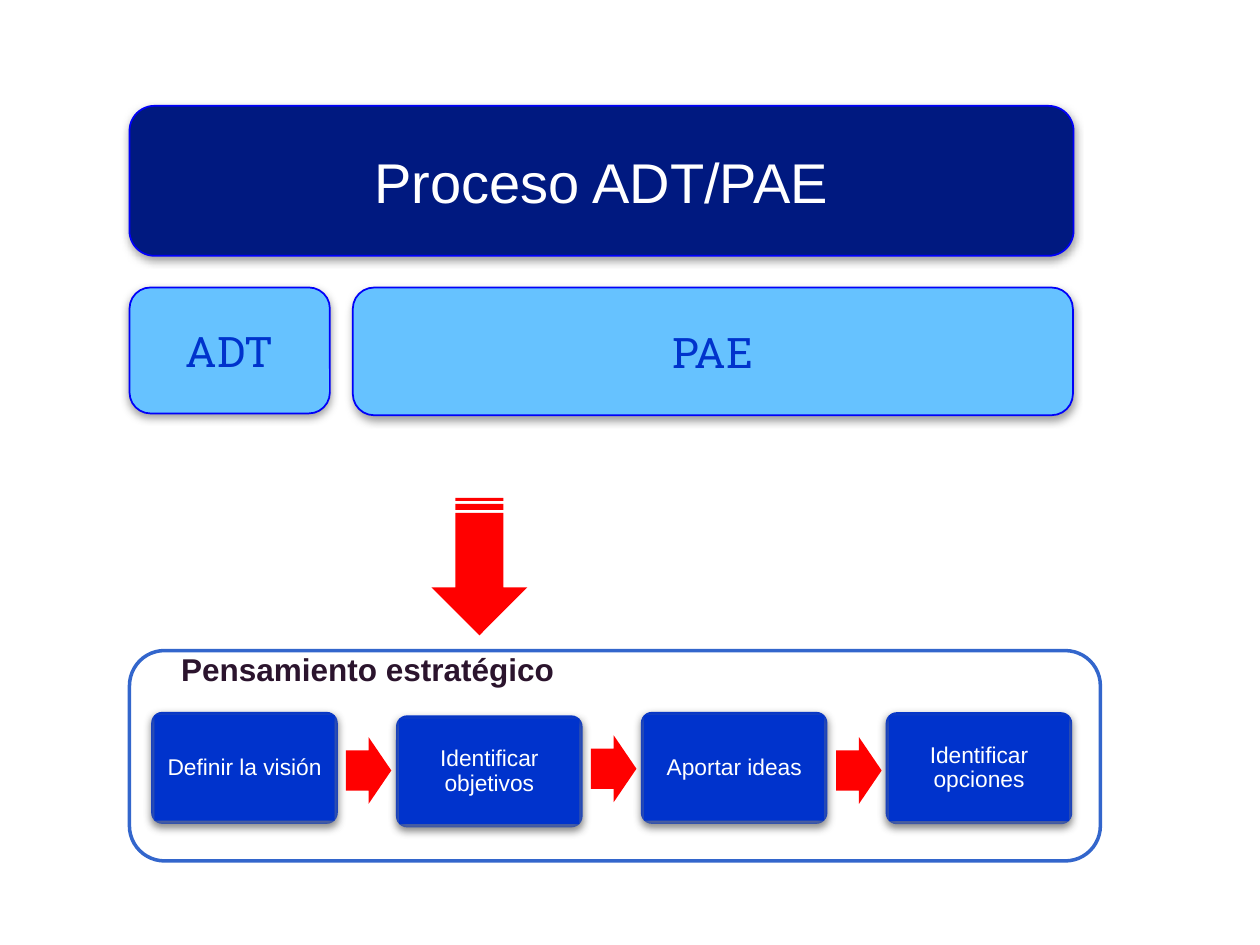
from typing import NamedTuple, Optional

from lxml import etree
from pptx import Presentation
from pptx.dml.color import RGBColor
from pptx.enum.shapes import MSO_SHAPE
from pptx.enum.text import MSO_ANCHOR, MSO_AUTO_SIZE, PP_ALIGN
from pptx.oxml.ns import qn
from pptx.util import Pt

ROUND, RECT = MSO_SHAPE.ROUNDED_RECTANGLE, MSO_SHAPE.RECTANGLE
ARROW, STRIPED = MSO_SHAPE.RIGHT_ARROW, MSO_SHAPE.STRIPED_RIGHT_ARROW
MIDDLE, CENTER = MSO_ANCHOR.MIDDLE, PP_ALIGN.CENTER
GROW = MSO_AUTO_SIZE.SHAPE_TO_FIT_TEXT

WHITE = RGBColor(0xFF, 0xFF, 0xFF)
NAVY = RGBColor(0x00, 0x19, 0x80)
SKY = RGBColor(0x66, 0xC2, 0xFF)
BLUE = RGBColor(0x00, 0x33, 0xCC)
BORDER = RGBColor(0x00, 0x00, 0xF9)
FRAME = RGBColor(0x33, 0x66, 0xCC)
RED = RGBColor(0xFF, 0x00, 0x00)
PLUM = RGBColor(0x2B, 0x14, 0x2D)
SHADOW = RGBColor(0x80, 0x80, 0x80)


class Box(NamedTuple):
    left: float
    top: float
    width: float
    height: float


class Banner(NamedTuple):
    text: str
    box: Box
    fill: RGBColor
    font: dict


class Step(NamedTuple):
    text: str
    top: float


STEP_LEFT, STEP_PITCH, STEP_W, STEP_H = 86.4, 139.9, 106.6, 64
LABEL_INSET = 1.8
ARROW_LEFT, ARROW_PITCH, ARROW_W, ARROW_H = 197.6, 140.1, 26, 38.2

LABEL_FONT = {"name": "Roboto Slab", "size": Pt(24)}
STEP_FONT = {"name": "Arial", "size": Pt(13)}
STEP_PARA = {"line_spacing": 0.9, "space_after": Pt(4.55)}
STEP_MARGINS = {f"margin_{side}": Pt(3.6)
                for side in ("left", "top", "right", "bottom")}

BANNERS = [
    Banner("Proceso ADT/PAE", Box(74, 60.5, 539.5, 85.7), NAVY,
           {"name": "Arial", "size": Pt(32)}),
    Banner("ADT", Box(74, 164.3, 114.5, 72), SKY, LABEL_FONT),
    Banner("PAE", Box(201.6, 164.3, 411.5, 73), SKY, LABEL_FONT),
]
STEPS = [
    Step("Definir la visión", 406.8),
    Step("Identificar objetivos", 408.8),
    Step("Aportar ideas", 406.8),
    Step("Identificar opciones", 407),
]
ARROW_TOPS = [421.2, 420.2, 421.2]


def apply(target, values: dict) -> None:
    for name, value in values.items():
        setattr(target, name, value)


def add_shadow(sp) -> None:
    effects = sp._element.spPr.find(qn("a:effectLst"))
    outer = etree.SubElement(effects, qn("a:outerShdw"), blurRad=str(Pt(5)),
                             dist=str(Pt(2)), dir="5400000", rotWithShape="0")
    color = etree.SubElement(outer, qn("a:srgbClr"), val=str(SHADOW))
    etree.SubElement(color, qn("a:alpha"), val="75000")


def add_shape(shapes, kind, box: Box, fill: Optional[RGBColor] = None,
              line: Optional[RGBColor] = None, weight: float = 1,
              shadow: bool = False, adj: tuple = ()):
    sp = shapes.add_shape(kind, *map(Pt, box))
    for i, value in enumerate(adj):
        sp.adjustments[i] = value
    if fill is None:
        sp.fill.background()
    else:
        sp.fill.solid()
        sp.fill.fore_color.rgb = fill
    if line is None:
        sp.line.fill.background()
    else:
        sp.line.color.rgb = line
        sp.line.width = Pt(weight)
    sp.shadow.inherit = False
    if shadow:
        add_shadow(sp)
    return sp


def write(sp, text: str, font: dict, color: RGBColor, para: dict, frame: dict) -> None:
    tf = sp.text_frame
    apply(tf, {"word_wrap": True, **frame})
    p = tf.paragraphs[0]
    apply(p, para)
    r = p.add_run()
    r.text = text
    apply(r.font, font)
    r.font.color.rgb = color


def add_banner(shapes, banner: Banner) -> None:
    sp = add_shape(shapes, ROUND, banner.box, banner.fill, BORDER, shadow=True)
    color = WHITE if banner.fill == NAVY else BLUE
    write(sp, banner.text, banner.font, color,
          {"alignment": CENTER}, {"vertical_anchor": MIDDLE})


def add_step(shapes, step: Step, left: float) -> None:
    group = shapes.add_group_shape().shapes
    add_shape(group, ROUND, Box(left, step.top, STEP_W, STEP_H), BLUE,
              shadow=True, adj=(0.1,))
    inner = Box(left + LABEL_INSET, step.top + LABEL_INSET,
                STEP_W - 2 * LABEL_INSET, STEP_H - 2 * LABEL_INSET)
    label = add_shape(group, RECT, inner, BLUE, shadow=True)
    write(label, step.text, STEP_FONT, WHITE, {"alignment": CENTER, **STEP_PARA},
          {"vertical_anchor": MIDDLE, **STEP_MARGINS})


def main() -> None:
    prs = Presentation()
    prs.slide_width, prs.slide_height = Pt(720), Pt(540)
    s = prs.slides.add_slide(prs.slide_layouts[6])

    # Strategic thinking steps and the arrows between them
    for i, step in enumerate(STEPS):
        add_step(s.shapes, step, STEP_LEFT + i * STEP_PITCH)
    for i, top in enumerate(ARROW_TOPS):
        box = Box(ARROW_LEFT + i * ARROW_PITCH, top, ARROW_W, ARROW_H)
        add_shape(s.shapes, ARROW, box, RED, adj=(0.6, 0.5))

    # Frame and heading of the steps
    add_shape(s.shapes, ROUND, Box(74, 371.8, 554.8, 120.2), line=FRAME, weight=2)
    heading = s.shapes.add_textbox(*map(Pt, Box(96.5, 368, 242.6, 29)))
    write(heading, "Pensamiento estratégico",
          {"name": "Arial", "size": Pt(18), "bold": True}, PLUM, {},
          {"auto_size": GROW})

    # Arrow down to the frame
    down = add_shape(s.shapes, STRIPED, Box(234.7, 296.4, 78.5, 54.8), RED)
    down.rotation = 90

    # Process banners
    for banner in BANNERS:
        add_banner(s.shapes, banner)

    prs.save("out.pptx")


if __name__ == "__main__":
    main()
